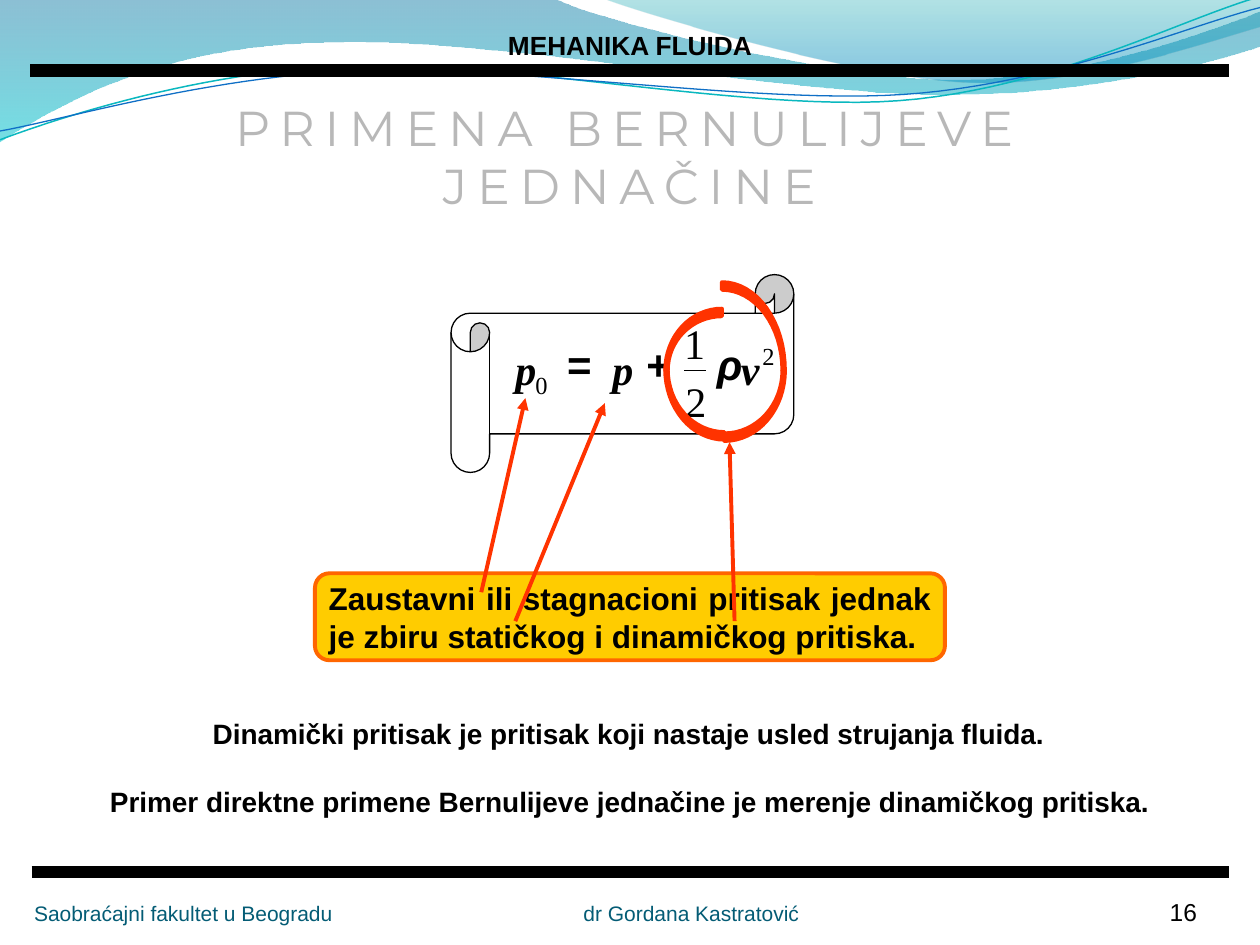
from dataclasses import dataclass
from math import cos, pi, sin

from pptx import Presentation
from pptx.dml.color import RGBColor
from pptx.enum.shapes import MSO_CONNECTOR as CONN, MSO_SHAPE as SHAPE
from pptx.enum.text import MSO_ANCHOR as ANCHOR, MSO_AUTO_SIZE as AUTO, PP_ALIGN as ALIGN
from pptx.oxml.ns import qn
from pptx.util import Inches, Pt
from lxml.etree import SubElement


@dataclass(frozen=True)
class Theme:
    sans: str = "Arial"
    serif: str = "Times New Roman"
    display: str = "Montserrat"
    ink: str = "000000"
    paper: str = "FFFFFF"
    title: str = "B8B8B8"
    footer: str = "045C75"
    accent: str = "FF3300"
    box: str = "FFCC00"
    box_line: str = "FF6600"
    title_size: float = 28
    formula_size: float = 24
    callout_size: float = 18
    body_size: float = 16
    header_size: float = 15
    small_size: float = 14
    footer_size: float = 12
    bar: float = 7.25
    stroke: float = 2.25


def rgb(value):
    return RGBColor.from_string(value)


def trace(path, steps=24):
    """Turn pairs (line ends) and sixes (cubic curves) into points."""
    points = [path[0]]
    for seg in path[1:]:
        if len(seg) == 2:
            points.append(seg)
            continue
        x0, y0 = points[-1]
        x1, y1, x2, y2, x3, y3 = seg
        for i in range(1, steps + 1):
            t = i / steps
            a, b, c, d = (1 - t) ** 3, 3 * t * (1 - t) ** 2, 3 * t * t * (1 - t), t ** 3
            points.append((a * x0 + b * x1 + c * x2 + d * x3,
                           a * y0 + b * y1 + c * y2 + d * y3))
    return points


def arc(cx, cy, rx, ry, start, steps=16):
    """Points of a quarter ellipse, clockwise from a start angle in degrees."""
    angles = [start * pi / 180 + i * pi / 2 / steps for i in range(steps + 1)]
    return [(cx + rx * cos(a), cy + ry * sin(a)) for a in angles]


class SlideBuilder:
    def __init__(self, slide, theme):
        self.s, self.th = slide, theme

    def run(self, p, text, size, font=None, color=None, bold=False, italic=False):
        r = p.add_run()
        r.text = text
        f = r.font
        f.name, f.size, f.bold, f.italic = font or self.th.sans, Pt(size), bold, italic
        f.color.rgb = rgb(color or self.th.ink)
        return r

    def title(self, text, x, y, w, h):
        sp = self.s.shapes.title
        sp.left, sp.top, sp.width, sp.height = map(Inches, (x, y, w, h))
        tf = sp.text_frame
        tf.word_wrap, tf.auto_size, tf.vertical_anchor = False, AUTO.NONE, ANCHOR.TOP
        p = tf.paragraphs[0]
        p.alignment = ALIGN.CENTER
        r = self.run(p, text, self.th.title_size, self.th.display, self.th.title)
        r.font._element.set("spc", "560")
        self.s.shapes.element.append(sp.element)  # in front of the waves

    def text(self, text, x, y, w, h, size, align=ALIGN.LEFT, anchor=ANCHOR.TOP,
             inset=True, wrap=True, tab=None, **style):
        tf = self.s.shapes.add_textbox(*map(Inches, (x, y, w, h))).text_frame
        tf.word_wrap, tf.vertical_anchor = wrap, anchor
        if not inset:
            tf.margin_left = tf.margin_right = tf.margin_top = tf.margin_bottom = 0
        p = tf.paragraphs[0]
        p.alignment = align
        if tab:
            tabs = SubElement(p._p.get_or_add_pPr(), qn("a:tabLst"))
            SubElement(tabs, qn("a:tab"), pos=str(Inches(tab)), algn="l")
        self.run(p, text, size, **style)

    def shape(self, kind, x, y, w, h, adj, fill, line, width):
        sp = self.s.shapes.add_shape(kind, *map(Inches, (x, y, w, h)))
        sp.adjustments[0] = adj
        sp.shadow.inherit = False
        sp.fill.solid()
        sp.fill.fore_color.rgb = rgb(fill)
        sp.line.color.rgb, sp.line.width = rgb(line), Pt(width)

    def line(self, start, end, color, width, arrow=False):
        cn = self.s.shapes.add_connector(CONN.STRAIGHT, *map(Inches, (*start, *end)))
        cn.line.color.rgb, cn.line.width = rgb(color), Pt(width)
        if arrow:
            SubElement(cn.line._get_or_add_ln(), qn("a:tailEnd"), type="triangle")
        SubElement(cn._element.spPr, qn("a:effectLst"))

    def free(self, points, fill=None, gradient=None, line=None, width=1):
        pts = [(Inches(x), Inches(y)) for x, y in points]
        fb = self.s.shapes.build_freeform(*pts[0], scale=1.0)
        fb.add_line_segments(pts[1:], close=bool(fill or gradient))
        sp = fb.convert_to_shape()
        sp.shadow.inherit = False
        if gradient:
            sp.fill.gradient()
            sp.fill.gradient_angle = 270
            for stop, (pos, color, alpha) in zip(sp.fill.gradient_stops, gradient):
                stop.position, stop.color.rgb = pos, rgb(color)
                clr = stop._gs.find(qn("a:srgbClr"))
                SubElement(clr, qn("a:alpha"), val=str(alpha * 1000))
        elif fill:
            sp.fill.solid()
            sp.fill.fore_color.rgb = rgb(fill)
        else:
            sp.fill.background()
        if line:
            sp.line.color.rgb, sp.line.width = rgb(line), Pt(width)
        else:
            sp.line.fill.background()


def main():
    prs = Presentation()
    prs.slide_width, prs.slide_height = Inches(10), Inches(7.5)
    th = Theme()
    b = SlideBuilder(prs.slides.add_slide(prs.slide_layouts[5]), th)

    # Wave background
    b.free(trace([(0, -0.01), (4.4, -0.01), (4.76, 0.17, 6.64, 0.63, 7.58, 0.63),
                  (8.53, 0.63, 9.58, 0.26, 10, 0.09), (10.01, 0.36),
                  (9.83, 0.44, 8.7, 0.76, 7.46, 0.75), (6.22, 0.75, 3.82, 0.28, 2.57, 0.34),
                  (1.29, 0.35, 0.46, 0.83, -0.01, 1.13)]),
           gradient=[(0, "0074A1", 45), (1, "00C6CF", 55)])
    b.free(trace([(4.79, -0.01), (5.09, 0.11, 6.82, 0.62, 7.69, 0.65),
                  (8.56, 0.69, 9.61, 0.32, 10, 0.21), (10, 0)]),
           gradient=[(0, "00A1A9", 30), (0.8, "008BBF", 45)])
    b.free(trace([(0, 1.11), (0.48, 0.93, 1.58, 0.57, 2.77, 0.52),
                  (3.95, 0.47, 5.93, 0.89, 7.13, 0.8), (8.33, 0.71, 9.38, 0.15, 9.98, -0.02)]),
           line="0AB8BF", width=0.85)
    b.free(trace([(0, 1.04), (0.47, 0.96, 1.64, 0.61, 2.83, 0.56),
                  (4.03, 0.51, 5.97, 0.83, 7.17, 0.75), (8.36, 0.67, 9.41, 0.21, 10, 0.06)]),
           line="0F6FC6", width=0.75)

    # Header, title and bars
    b.title("PRIMENA BERNULIJEVE JEDNAČINE", 0.31, 0.72, 9.37, 0.55)
    b.text("MEHANIKA FLUIDA", 3.71, 0.18, 2.58, 0.35, th.header_size, ALIGN.CENTER, bold=True)
    b.line((0.24, 0.56), (9.75, 0.56), th.ink, th.bar)
    b.line((0.25, 6.92), (9.75, 6.92), th.ink, th.bar)

    # Formula on a scroll
    b.shape(SHAPE.HORIZONTAL_SCROLL, 3.58, 2.18, 2.72, 1.57, 0.195, th.paper, th.ink, 0.75)
    b.line((5.43, 2.94), (5.6, 2.94), th.ink, 0.5)
    plain = dict(font=th.serif)
    variable = dict(font=th.serif, bold=True, italic=True)
    big, small = th.formula_size, th.small_size
    for symbol, x, y, size, style in [
        ("p", 4.09, 2.73, big, variable), ("0", 4.25, 2.94, small, plain),
        ("=", 4.5, 2.69, big, dict(bold=True)), ("p", 4.86, 2.73, big, variable),
        ("+", 5.13, 2.69, big, dict(bold=True)), ("1", 5.43, 2.52, big, plain),
        ("2", 5.44, 2.98, big, plain), ("ρ", 5.69, 2.69, big, dict(bold=True, italic=True)),
        ("v", 5.88, 2.73, big, variable), ("2", 6.05, 2.71, small, plain),
    ]:
        b.text(symbol, x, y, size / 140, size / 60, size, inset=False, wrap=False, **style)

    # Callout and its arrows
    b.shape(SHAPE.ROUNDED_RECTANGLE, 2.5, 4.55, 5, 0.69, 0.167, th.box, th.box_line, th.stroke)
    b.text("Zaustavni ili stagnacioni pritisak jednak je zbiru statičkog i dinamičkog pritiska.",
           2.51, 4.55, 4.98, 0.7, th.callout_size, ALIGN.JUSTIFY, bold=True)
    for start, end in [((3.82, 4.7), (4.17, 3.16)), ((4.09, 4.93), (4.8, 3.2)),
                       ((5.83, 4.93), (5.79, 3.51))]:
        b.line(start, end, th.accent, th.stroke, arrow=True)

    # Hand-drawn ring: four quarter bands (centre, outer radii, start angle)
    for cx, cy, rx, ry, start in [(5.73, 2.94, 0.5, 0.7, 270), (5.75, 2.94, 0.48, 0.56, 0),
                                  (5.75, 2.93, 0.47, 0.56, 90), (5.73, 2.94, 0.45, 0.49, 180)]:
        inner = arc(cx, cy, rx - 0.02, ry - 0.06, start)
        b.free(arc(cx, cy, rx, ry, start) + inner[::-1],
               fill=th.accent, line=th.accent, width=th.stroke)

    # Closing statements
    for text, x, y in [
        ("Dinamički pritisak je pritisak koji nastaje usled strujanja fluida.", 0.59, 5.64),
        ("Primer direktne primene Bernulijeve jednačine je merenje dinamičkog pritiska.", 0.6, 6.18),
    ]:
        b.text(text, x, y, 8.8, 0.37, th.body_size, ALIGN.CENTER, bold=True)

    # Footer
    b.text("Saobraćajni fakultet u Beogradu\tdr Gordana Kastratović", 0.27, 6.95, 6.31, 0.4,
           th.footer_size, anchor=ANCHOR.BOTTOM, inset=False, tab=4.36, color=th.footer)
    b.text("16", 8.67, 6.95, 0.83, 0.4, th.small_size, ALIGN.RIGHT, ANCHOR.BOTTOM, inset=False)

    prs.save("out.pptx")


if __name__ == "__main__":
    main()
